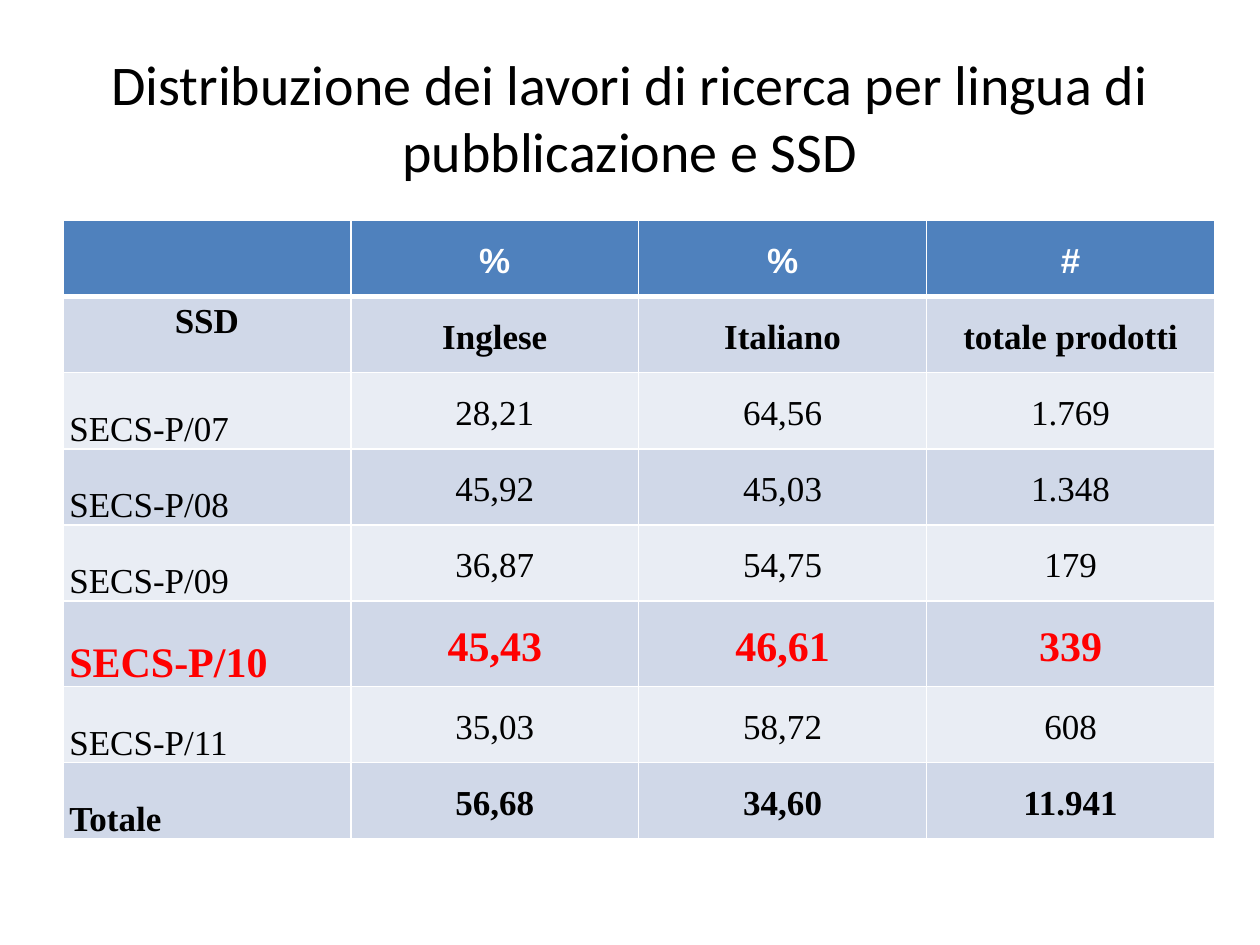
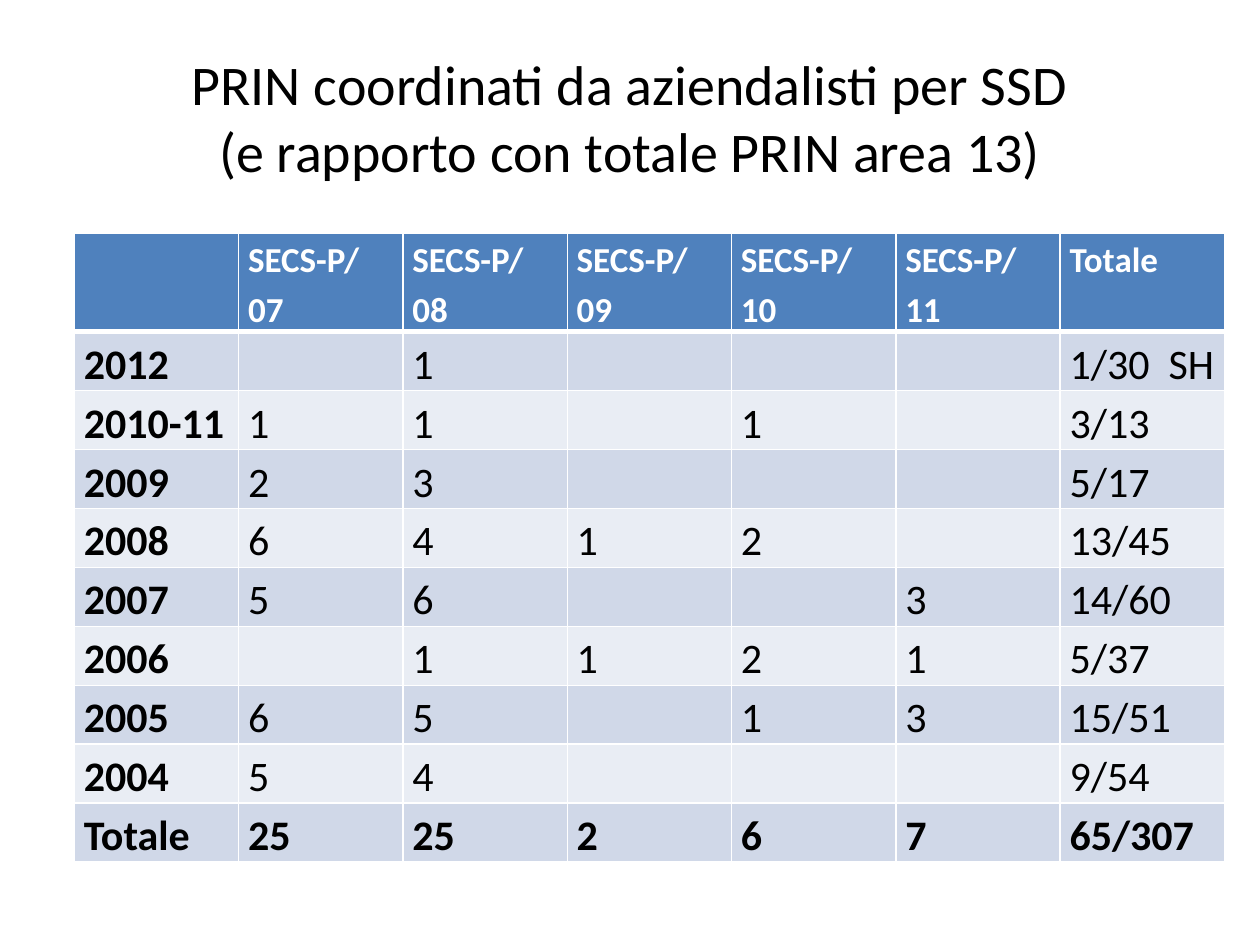
"""Builds two slides with tables on research output by SSD."""
from lxml import etree
from pptx import Presentation
from pptx import util as u
from pptx.dml.color import RGBColor
from pptx.enum import text
from pptx.oxml import ns

BLACK = RGBColor(0x00, 0x00, 0x00)
WHITE = RGBColor(0xFF, 0xFF, 0xFF)
RED = RGBColor(0xFF, 0x00, 0x00)
HEADER_BLUE = RGBColor(0x4F, 0x81, 0xBD)
BANDS = (RGBColor(0xE9, 0xED, 0xF4), RGBColor(0xD0, 0xD8, 0xE8))

TOP, MIDDLE, BOTTOM = (text.MSO_ANCHOR.TOP, text.MSO_ANCHOR.MIDDLE,
                       text.MSO_ANCHOR.BOTTOM)
LEFT, CENTER = text.PP_ALIGN.LEFT, text.PP_ALIGN.CENTER

TITLE_BOX = (0.5, 0.3, 9, 1.25)
LANGUAGE_BOX = (0.5, 1.75, 9.14, 4.91)
PRIN_BOX = (0.59, 1.85, 9.13, 4.1)

LANGUAGE_ROWS = [
    ("", "%", "%", "#"),
    ("SSD", "Inglese", "Italiano", "totale prodotti"),
    ("SECS-P/07", "28,21", "64,56", "1.769"),
    ("SECS-P/08", "45,92", "45,03", "1.348"),
    ("SECS-P/09", "36,87", "54,75", "179"),
    ("SECS-P/10", "45,43", "46,61", "339"),
    ("SECS-P/11", "35,03", "58,72", "608"),
    ("Totale", "56,68", "34,60", "11.941"),
]
HIGHLIGHTED_ROW = 5
HIGHLIGHTED_HEIGHT = 0.68

PRIN_ROWS = [
    ("", "SECS-P/07", "SECS-P/08", "SECS-P/09", "SECS-P/10", "SECS-P/11", "Totale"),
    ("2012", "", "1", "", "", "", "1/30  SH"),
    ("2010-11", "1", "1", "", "1", "", "3/13"),
    ("2009", "2", "3", "", "", "", "5/17"),
    ("2008", "6", "4", "1", "2", "", "13/45"),
    ("2007", "5", "6", "", "", "3", "14/60"),
    ("2006", "", "1", "1", "2", "1", "5/37"),
    ("2005", "6", "5", "", "1", "3", "15/51"),
    ("2004", "5", "4", "", "", "", "9/54"),
    ("Totale", "25", "25", "2", "6", "7", "65/307"),
]


def add_text(paragraph, wording, font, size, color, bold=False):
    """Add one formatted run to a paragraph."""
    run = paragraph.add_run()
    run.text = wording
    run.font.name = font
    run.font.size = u.Pt(size)
    run.font.color.rgb = color
    run.font.bold = bold


def add_titled_slide(deck, title_lines):
    """Add a title-only slide with its title lines centred."""
    slide = deck.slides.add_slide(deck.slide_layouts[5])
    title = slide.shapes.title
    title.left, title.top, title.width, title.height = map(u.Inches, TITLE_BOX)
    title.text_frame.vertical_anchor = MIDDLE
    heading = title.text_frame.paragraphs[0]
    heading.alignment = CENTER
    for index, line in enumerate(title_lines):
        if index:
            heading.add_line_break()
        add_text(heading, line, "Calibri", 32, BLACK)
    return slide


def draw_borders(cell, row):
    """Draw white cell borders, thicker under the header row."""
    properties = cell._tc.get_or_add_tcPr()
    widths = {"lnL": 1, "lnR": 1, "lnT": 3 if row == 1 else 1,
              "lnB": 3 if row == 0 else 1}
    for side, width in widths.items():
        border = etree.SubElement(properties, ns.qn(f"a:{side}"), w=str(u.Pt(width)))
        paint = etree.SubElement(border, ns.qn("a:solidFill"))
        etree.SubElement(paint, ns.qn("a:srgbClr"), val=str(WHITE))


def add_banded_table(slide, box, rows, side_insets, style_cell):
    """Fill a box with a banded table; side_insets is left plus right inset."""
    left, top, width, height = map(u.Inches, box)
    table = slide.shapes.add_table(len(rows), len(rows[0]), left, top, width, height).table
    for row, values in enumerate(rows):
        for column, value in enumerate(values):
            cell = table.cell(row, column)
            draw_borders(cell, row)
            cell.fill.solid()
            cell.fill.fore_color.rgb = BANDS[row % 2] if row else HEADER_BLUE
            cell.margin_left = cell.margin_right = u.Inches(side_insets / 2)
            cell.margin_top = cell.margin_bottom = 0
            if value:
                anchor, alignment, font_style = style_cell(row, column)
                cell.vertical_anchor = anchor
                paragraph = cell.text_frame.paragraphs[0]
                paragraph.alignment = alignment
                paragraph.line_spacing = 1.15
                add_text(paragraph, value, *font_style)
    return table


def style_language_cell(row, column):
    """Return anchor, alignment and font of a language table cell."""
    if row == 0:
        return MIDDLE, CENTER, ("Arial", 20, WHITE, True)
    highlighted = row == HIGHLIGHTED_ROW
    bold = highlighted or row in (1, len(LANGUAGE_ROWS) - 1)
    font_style = ("Times New Roman", 24 if highlighted else 20,
                  RED if highlighted else BLACK, bold)
    if column:
        return MIDDLE, CENTER, font_style
    return (TOP, CENTER, font_style) if row == 1 else (BOTTOM, LEFT, font_style)


def style_prin_cell(row, column):
    """Return anchor, alignment and font of a PRIN table cell."""
    if row == 0:
        return TOP, LEFT, ("Calibri", 20, WHITE, True)
    bold = column == 0 or row == len(PRIN_ROWS) - 1
    return TOP, LEFT, ("Calibri", 24, BLACK, bold)


def build_language_slide(deck):
    """Build the slide on publication languages by SSD."""
    slide = add_titled_slide(
        deck, ["Distribuzione dei lavori di ricerca per lingua di pubblicazione e SSD"])
    table = add_banded_table(slide, LANGUAGE_BOX, LANGUAGE_ROWS, 0.1, style_language_cell)
    plain_height = (LANGUAGE_BOX[3] - HIGHLIGHTED_HEIGHT) / (len(LANGUAGE_ROWS) - 1)
    for index, row in enumerate(table.rows):
        row.height = u.Inches(
            HIGHLIGHTED_HEIGHT if index == HIGHLIGHTED_ROW else plain_height)


def build_prin_slide(deck):
    """Build the slide on coordinated PRIN projects by year and SSD."""
    slide = add_titled_slide(deck, ["PRIN coordinati da aziendalisti per SSD",
                                    "(e rapporto con totale PRIN area 13)"])
    add_banded_table(slide, PRIN_BOX, PRIN_ROWS, 0.15, style_prin_cell)


def main():
    """Create and save the deck."""
    deck = Presentation()
    deck.slide_width, deck.slide_height = u.Inches(10), u.Inches(7.5)
    build_language_slide(deck)
    build_prin_slide(deck)
    deck.save("out.pptx")


if __name__ == "__main__":
    main()
